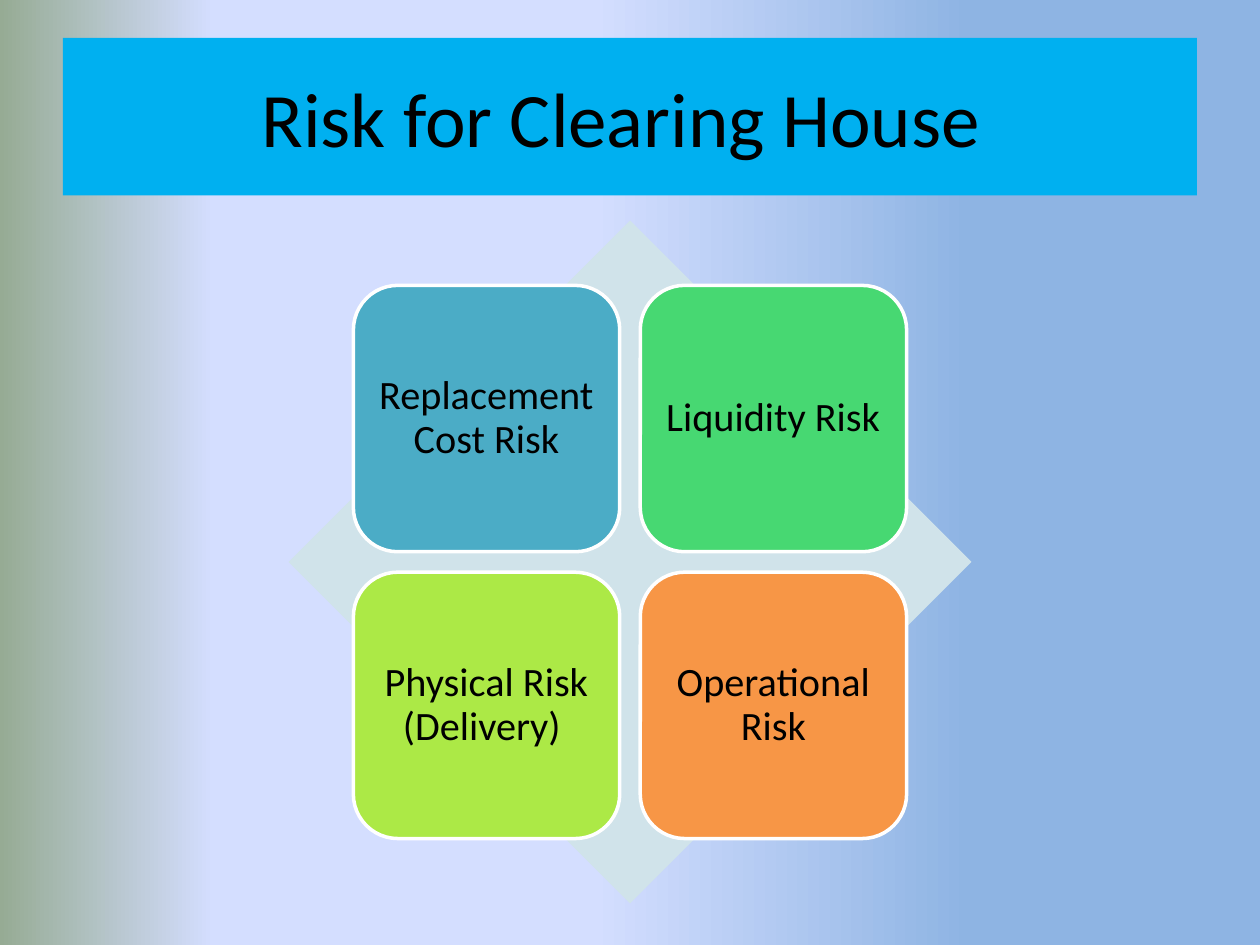
"""Build a slide with a four-part matrix of clearing house risks."""
from lxml import etree
from pptx import Presentation
from pptx import util as u
from pptx.dml.color import RGBColor
from pptx.enum import shapes, text
from pptx.oxml.ns import qn

BLACK = RGBColor(0x00, 0x00, 0x00)
WHITE = RGBColor(0xFF, 0xFF, 0xFF)
SKY = RGBColor(0x00, 0xB0, 0xF0)
PALE = RGBColor(0xD0, 0xE3, 0xEA)
TEAL = RGBColor(0x4B, 0xAC, 0xC6)
GREEN = RGBColor(0x47, 0xD8, 0x72)
LIME = RGBColor(0xAC, 0xE9, 0x46)
ORANGE = RGBColor(0xF7, 0x96, 0x46)
STEEL = RGBColor(0x8E, 0xB4, 0xE3)
LAVENDER = RGBColor(0xD4, 0xDE, 0xFF)
SAGE = RGBColor(0x96, 0xAB, 0x94)

HEADING = "Risk for Clearing House "
RISKS = [
    [("Replacement Cost Risk", TEAL), ("Liquidity Risk", GREEN)],
    [("Physical Risk (Delivery) ", LIME), ("Operational Risk", ORANGE)],
]
BACKDROP = [(23, STEEL), (53, LAVENDER), (83, LAVENDER), (100, SAGE)]

WIDTH, HEIGHT = 10, 7.5
DIAMOND = 5.42
CENTER_X, CENTER_Y = WIDTH / 2, 4.46
CARD = 0.39 * DIAMOND
GAP = 0.03 * DIAMOND


def paint_backdrop(slide):
    fill = slide.background.fill
    fill.gradient()
    fill.gradient_angle = 180
    stops = slide.background._cSld.find(".//" + qn("a:gsLst"))
    for stop in list(stops):
        stops.remove(stop)
    for percent, color in BACKDROP:
        stop = etree.SubElement(stops, qn("a:gs"), pos=str(percent * 1000))
        etree.SubElement(stop, qn("a:srgbClr"), val=str(color))


def add_block(parent, kind, left, top, width, height, color):
    block = parent.shapes.add_shape(kind, *map(u.Inches, (left, top, width, height)))
    block.shadow.inherit = False
    block.fill.solid()
    block.fill.fore_color.rgb = color
    block.line.fill.background()
    return block


def write(block, words, size, spacing=1.0):
    frame = block.text_frame
    frame.word_wrap = True
    frame.vertical_anchor = text.MSO_ANCHOR.MIDDLE
    paragraph = frame.paragraphs[0]
    paragraph.text = words
    paragraph.alignment = text.PP_ALIGN.CENTER
    paragraph.line_spacing = spacing
    paragraph.font.name = "Calibri"
    paragraph.font.size = u.Pt(size)
    paragraph.font.color.rgb = BLACK


def add_matrix(slide):
    matrix = slide.shapes.add_group_shape()
    add_block(matrix, shapes.MSO_SHAPE.DIAMOND, CENTER_X - DIAMOND / 2,
              CENTER_Y - DIAMOND / 2, DIAMOND, DIAMOND, PALE)
    first_left = CENTER_X - GAP / 2 - CARD
    first_top = CENTER_Y - GAP / 2 - CARD
    for row, risks in enumerate(RISKS):
        for column, (risk, color) in enumerate(risks):
            card = add_block(matrix, shapes.MSO_SHAPE.ROUNDED_RECTANGLE,
                             first_left + column * (CARD + GAP),
                             first_top + row * (CARD + GAP), CARD, CARD, color)
            card.line.color.rgb = WHITE
            card.line.width = u.Pt(2)
            frame = card.text_frame
            frame.margin_left = frame.margin_right = u.Inches(0.1)
            frame.margin_top = frame.margin_bottom = u.Inches(0.1)
            write(card, risk, 23, 0.9)


def main():
    deck = Presentation()
    deck.slide_width, deck.slide_height = u.Inches(WIDTH), u.Inches(HEIGHT)
    slide = deck.slides.add_slide(deck.slide_layouts[6])
    paint_backdrop(slide)
    banner = add_block(slide, shapes.MSO_SHAPE.RECTANGLE, 0.05 * WIDTH,
                       0.04 * HEIGHT, 0.9 * WIDTH, HEIGHT / 6, SKY)
    write(banner, HEADING, 44)
    add_matrix(slide)
    deck.save("out.pptx")


if __name__ == "__main__":
    main()
